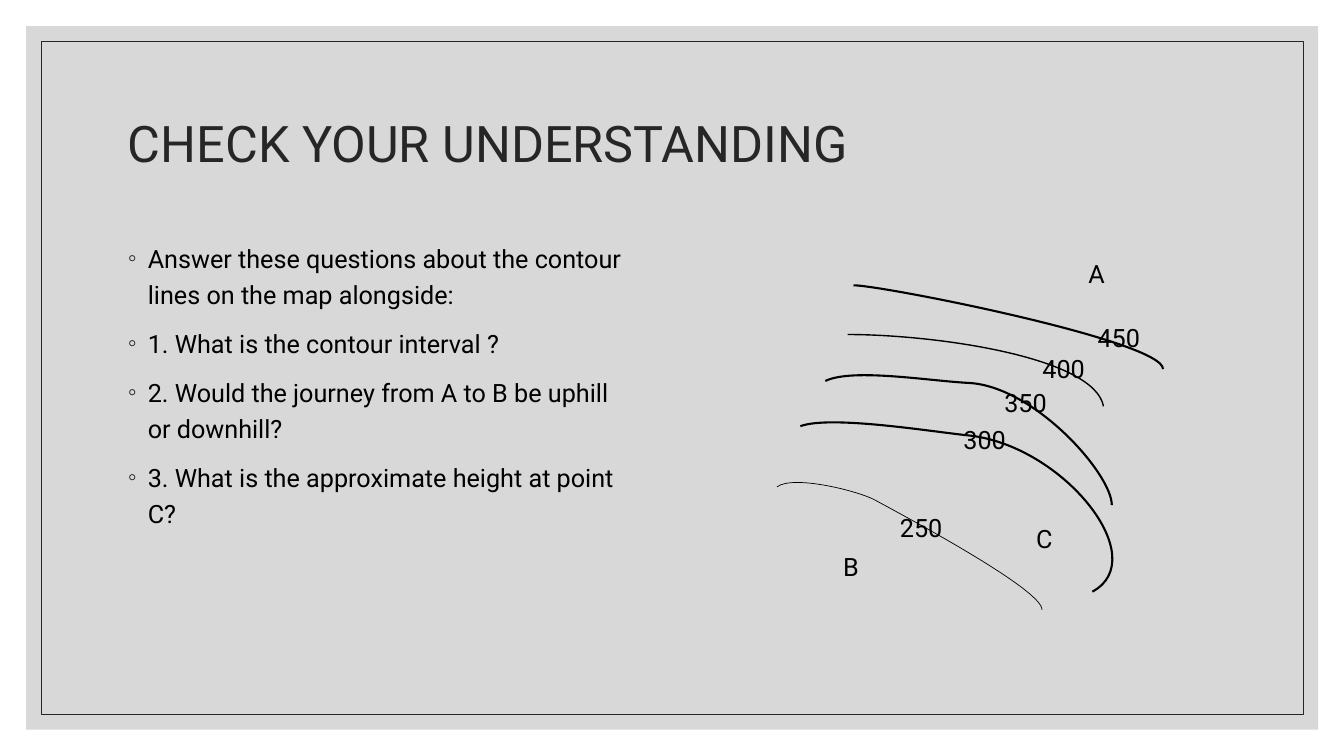
from lxml import etree
from pptx import Presentation
from pptx import util as u
from pptx.dml import color
from pptx.enum import shapes, text
from pptx.oxml import ns

COLORS = {"backdrop": "BFBFBF", "dark": "262626", "black": "000000"}
FONT = "Roboto"
LABEL_HEIGHT = 1.02

QUESTIONS = [
    "Answer these questions about the contour lines on the map alongside:",
    "1. What is the contour interval ?",
    "2. Would the journey from A to B be uphill or downhill?",
    "3. What is the approximate height at point C?",
]

# Line width in points, then the Bézier points in cm: a start and three per segment
CONTOURS = [
    (1, [(21.36, 8.43), (23.55, 8.43), (27.58, 8.99), (27.81, 10.24)]),
    (1.5, [(20.8, 9.6), (21.49, 9.27), (23.42, 9.6), (24.41, 9.65),
           (26.06, 9.73), (28.02, 11.94), (28.02, 12.73)]),
    (1.5, [(20.17, 10.74), (20.93, 10.46), (23.42, 10.87), (24.38, 10.97),
           (26.77, 11.2), (29.08, 14.07), (27.53, 14.91)]),
    (0.5, [(19.58, 12.27), (19.99, 11.96), (21.62, 12.37), (22.05, 12.6),
           (22.5, 12.85), (26.31, 14.86), (26.26, 15.37)]),
    (1.5, [(21.51, 7.19), (22.23, 7.19), (29.31, 8.59), (29.31, 9.3)]),
]

# Text, left, top and width in cm
LABELS = [
    ("A", 27.18, 6.38, 1.19),
    ("B", 21, 13.77, 1.04),
    ("300", 24.03, 10.57, 1.73),
    ("250", 22.43, 12.78, 1.68),
    ("350", 25.06, 9.64, 1.73),
    ("C", 25.86, 13.06, 1.12),
    ("400", 26.02, 8.78, 1.93),
    ("450", 27.41, 8, 1.73),
]


def rgb(name):
    return color.RGBColor.from_string(COLORS[name])


def add_run(paragraph, words, size, color_name):
    run = paragraph.add_run()
    run.text = words
    run.font.name = FONT
    run.font.size = u.Pt(size)
    run.font.color.rgb = rgb(color_name)


def place(shape, left, top, width, height):
    shape.left, shape.top = u.Cm(left), u.Cm(top)
    shape.width, shape.height = u.Cm(width), u.Cm(height)


def set_outline(shape, color_name, width):
    shape.line.color.rgb = rgb(color_name)
    shape.line.width = u.Pt(width)


def add_panel(slide, left, top, width, height):
    """Add an unfilled rectangle behind the title."""
    panel = slide.shapes.add_shape(
        shapes.MSO_SHAPE.RECTANGLE, u.Cm(left), u.Cm(top), u.Cm(width), u.Cm(height))
    panel.shadow.inherit = False
    panel.fill.background()
    panel.line.fill.background()
    slide.shapes.title.element.addprevious(panel.element)
    return panel


def add_background(slide):
    backdrop = add_panel(slide, 0.66, 0.66, 32.56, 17.73)
    backdrop.fill.solid()
    backdrop.fill.fore_color.rgb = rgb("backdrop")
    fill_color = backdrop.element.spPr.find(ns.qn("a:solidFill"))[0]
    etree.SubElement(fill_color, ns.qn("a:alpha"), val="60000")

    frame = add_panel(slide, 1.04, 1.04, 31.8, 16.97)
    set_outline(frame, "dark", 0.5)


def fill_title(title, words):
    place(title, 2.97, 1.78, 27.94, 3.81)
    frame = title.text_frame
    frame.auto_size = text.MSO_AUTO_SIZE.NONE
    frame.vertical_anchor = text.MSO_ANCHOR.MIDDLE
    paragraph = frame.paragraphs[0]
    paragraph.alignment = text.PP_ALIGN.LEFT
    paragraph.line_spacing = 0.9
    add_run(paragraph, words, 36, "dark")


def add_bullet(paragraph):
    properties = paragraph._p.get_or_add_pPr()
    indent = u.Cm(0.5)
    properties.set("marL", str(indent))
    properties.set("indent", str(-indent))
    bullet_color = etree.SubElement(properties, ns.qn("a:buClr"))
    etree.SubElement(bullet_color, ns.qn("a:srgbClr"), val=COLORS["dark"])
    etree.SubElement(properties, ns.qn("a:buChar"), char="◦")


def fill_list(body, items):
    place(body, 2.97, 5.84, 13.05, 10.41)
    frame = body.text_frame
    frame.auto_size = text.MSO_AUTO_SIZE.NONE
    for index, item in enumerate(items):
        paragraph = frame.add_paragraph() if index else frame.paragraphs[0]
        paragraph.line_spacing = 1.2
        paragraph.space_before = u.Pt(9)
        add_bullet(paragraph)
        add_run(paragraph, item, 18, "black")


def bend_segments(shape):
    """Turn every three straight segments of a freeform into one cubic curve."""
    lines = list(shape.element.iter(ns.qn("a:lnTo")))
    for first in range(0, len(lines), 3):
        curve = etree.Element(ns.qn("a:cubicBezTo"))
        lines[first].addprevious(curve)
        for line in lines[first:first + 3]:
            curve.append(line[0])
            line.getparent().remove(line)


def add_contour(slide, width, points):
    start, *others = [(u.Cm(x), u.Cm(y)) for x, y in points]
    builder = slide.shapes.build_freeform(*start)
    builder.add_line_segments(others, close=False)
    contour = builder.convert_to_shape()
    bend_segments(contour)
    contour.shadow.inherit = False
    contour.fill.background()
    set_outline(contour, "black", width)


def add_label(slide, words, left, top, width):
    label = slide.shapes.add_textbox(
        u.Cm(left), u.Cm(top), u.Cm(width), u.Cm(LABEL_HEIGHT))
    frame = label.text_frame
    frame.word_wrap = True
    frame.auto_size = text.MSO_AUTO_SIZE.SHAPE_TO_FIT_TEXT
    add_run(frame.paragraphs[0], words, 18, "black")


def main():
    presentation = Presentation()
    presentation.slide_width, presentation.slide_height = u.Cm(33.87), u.Cm(19.05)
    slide = presentation.slides.add_slide(presentation.slide_layouts[1])

    # Background and text
    add_background(slide)
    fill_title(slide.shapes.title, "CHECK YOUR UNDERSTANDING")
    fill_list(slide.placeholders[1], QUESTIONS)

    # Contour map
    for width, points in CONTOURS:
        add_contour(slide, width, points)
    for label in LABELS:
        add_label(slide, *label)

    presentation.save("out.pptx")


if __name__ == "__main__":
    main()
